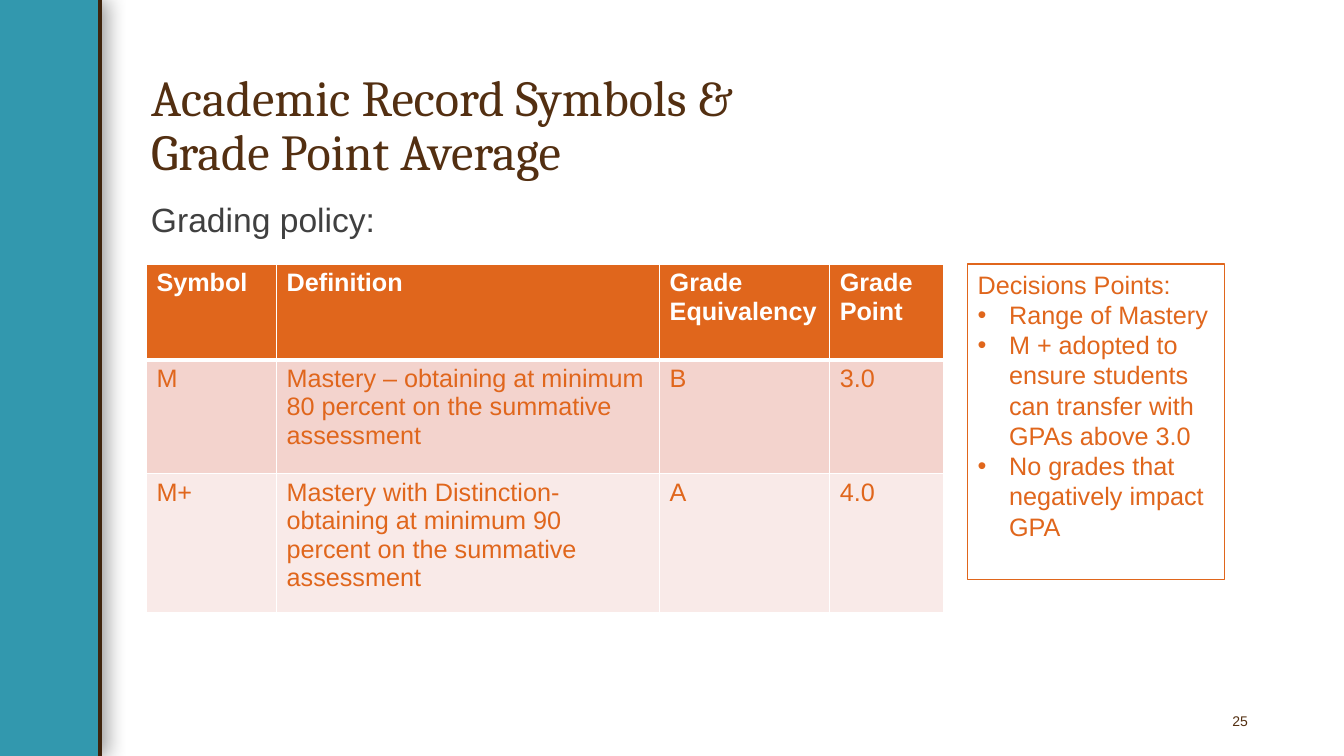
import pptx
import pptx.dml.color
import pptx.enum.shapes
import pptx.enum.text
import pptx.oxml
import pptx.oxml.ns
import pptx.util

Pt = pptx.util.Pt
Align = pptx.enum.text.PP_ALIGN
Anchor = pptx.enum.text.MSO_ANCHOR

COLOURS = {
    "teal": "3298AE",
    "brown": "532F11",
    "dark brown": "3F240D",
    "grey": "404040",
    "orange": "E0661C",
    "pink": "F3D3CD",
    "pale pink": "F9EAE8",
    "white": "FFFFFF",
    "black": "000000",
}
HEADING_FONT, BODY_FONT = "Cambria", "Arial"


def rgb(colour):
    return pptx.dml.color.RGBColor.from_string(COLOURS[colour])


def add_xml(parent, xml):
    namespace = pptx.oxml.ns.nsdecls("a")
    parent.append(pptx.oxml.parse_xml(xml.replace(" ", f" {namespace} ", 1)))


class SlideBuilder:
    def __init__(self, slide):
        self.slide = slide
        self.shapes = slide.shapes

    def add_runs(self, paragraph, text, size, colour, font=BODY_FONT, bold=False):
        """Add text to a paragraph, turning each newline into a line break."""
        for number, line in enumerate(text.split("\n")):
            if number:
                paragraph.add_line_break()
            run = paragraph.add_run()
            run.text = line
            run.font.size = Pt(size)
            run.font.name = font
            run.font.bold = bold
            run.font.color.rgb = rgb(colour)

    def title(self, text, left, top, width, height):
        title = self.shapes.title
        title.left, title.top, title.width, title.height = map(Pt, (left, top, width, height))
        title.text_frame.vertical_anchor = Anchor.BOTTOM
        paragraph = title.text_frame.paragraphs[0]
        paragraph.alignment = Align.LEFT
        paragraph.line_spacing = 0.9
        self.add_runs(paragraph, text, 36, "brown", HEADING_FONT)

    def text(self, text, left, top, width, height, size, colour,
             align=Align.LEFT, anchor=Anchor.TOP):
        frame = self.shapes.add_textbox(*map(Pt, (left, top, width, height))).text_frame
        frame.word_wrap = True
        frame.vertical_anchor = anchor
        paragraph = frame.paragraphs[0]
        paragraph.alignment = align
        self.add_runs(paragraph, text, size, colour)
        return frame

    def rectangle(self, left, top, width, height, fill, line=None):
        rectangle = self.shapes.add_shape(
            pptx.enum.shapes.MSO_SHAPE.RECTANGLE, *map(Pt, (left, top, width, height)))
        rectangle.shadow.inherit = False
        rectangle.fill.solid()
        rectangle.fill.fore_color.rgb = rgb(fill)
        if line:
            rectangle.line.color.rgb = rgb(line)
            rectangle.line.width = Pt(1)
        else:
            rectangle.line.fill.background()
        return rectangle

    def cast_shadow(self, shape, blur, distance, opacity):
        effects = shape._element.spPr.find(pptx.oxml.ns.qn("a:effectLst"))
        add_xml(effects, f'<a:outerShdw blurRad="{Pt(blur)}" dist="{Pt(distance)}" dir="0" '
                         f'algn="l" rotWithShape="0"><a:srgbClr val="{COLOURS["black"]}">'
                         f'<a:alpha val="{opacity * 1000}"/></a:srgbClr></a:outerShdw>')

    def line(self, x1, y1, x2, y2, colour, width):
        line = self.shapes.add_connector(
            pptx.enum.shapes.MSO_CONNECTOR.STRAIGHT, *map(Pt, (x1, y1, x2, y2)))
        line.line.color.rgb = rgb(colour)
        line.line.width = Pt(width)
        add_xml(line._element.spPr, "<a:effectLst />")

    def bulleted_box(self, heading, points, left, top, width, height):
        frame = self.rectangle(left, top, width, height, "white", "orange").text_frame
        frame.word_wrap = True
        frame.vertical_anchor = Anchor.TOP
        for number, text in enumerate([heading, *points]):
            paragraph = frame.add_paragraph() if number else frame.paragraphs[0]
            paragraph.alignment = Align.LEFT
            self.add_runs(paragraph, text, 18, "orange")
            if number:
                properties = paragraph._p.get_or_add_pPr()
                properties.set("marL", str(Pt(22.5)))
                properties.set("indent", str(-Pt(22.5)))
                add_xml(properties, f'<a:buFont typeface="{BODY_FONT}"/>')
                add_xml(properties, '<a:buChar char="•"/>')

    def border(self, cell, side, width):
        add_xml(cell._tc.get_or_add_tcPr(),
                f'<a:ln{side} w="{Pt(width)}"><a:solidFill>'
                f'<a:srgbClr val="{COLOURS["white"]}"/></a:solidFill></a:ln{side}>')

    def table(self, rows, fills, left, top, widths, heights):
        """Draw a table whose first row is a bold header over a thick rule."""
        table = self.shapes.add_table(
            len(rows), len(widths),
            *map(Pt, (left, top, sum(widths), sum(heights)))).table
        table.horz_banding = False
        for column, width in zip(table.columns, widths):
            column.width = Pt(width)
        for r, (texts, fill, height) in enumerate(zip(rows, fills, heights)):
            table.rows[r].height = Pt(height)
            header = r == 0
            for c, text in enumerate(texts):
                cell = table.cell(r, c)
                for side in "LRTB":
                    under_header = (r, side) in ((0, "B"), (1, "T"))
                    self.border(cell, side, 3 if under_header else 1)
                cell.fill.solid()
                cell.fill.fore_color.rgb = rgb(fill)
                self.add_runs(cell.text_frame.paragraphs[0], text, 18,
                              "white" if header else "orange", bold=header)


def main():
    deck = pptx.Presentation()
    deck.slide_width, deck.slide_height = Pt(960), Pt(540)
    builder = SlideBuilder(deck.slides.add_slide(deck.slide_layouts[5]))

    side_band = builder.rectangle(0, 0, 72.7, 540, "teal")
    builder.cast_shadow(side_band, blur=15, distance=3, opacity=40)
    builder.line(71.5, 540, 71.5, 0, "dark brown", 3)

    builder.title("Academic Record Symbols & \nGrade Point Average", 100.8, 28.8, 791.3, 104.4)
    policy = builder.text("Grading policy:", 100.8, 141.8, 792, 342.7, 24, "grey")
    policy.paragraphs[0].line_spacing = 0.9
    policy.paragraphs[0].space_before = Pt(10)

    grades = [
        ("Symbol", "Definition", "Grade Equivalency", "Grade Point"),
        ("M", "Mastery – obtaining at minimum 80 percent on the summative assessment",
         "B", "3.0"),
        ("M+", "Mastery with Distinction- obtaining at minimum 90 percent on the "
         "summative assessment", "A", "4.0"),
    ]
    builder.table(grades, ("orange", "pink", "pale pink"), 104.6, 188.6,
                  widths=(93, 273.6, 121.5, 81.4), heights=(68.4, 81.4, 99.4))

    builder.bulleted_box(
        "Decisions Points:",
        ["Range of Mastery",
         "M + adopted to ensure students can transfer with GPAs above 3.0",
         "No grades that negatively impact GPA"],
        691.2, 188.6, 183.6, 225.4)

    page_number = builder.text("25", 675.4, 500.4, 216, 28.8, 10, "brown",
                               Align.RIGHT, Anchor.MIDDLE)
    page_number.margin_right = 0

    deck.save("out.pptx")


if __name__ == "__main__":
    main()
